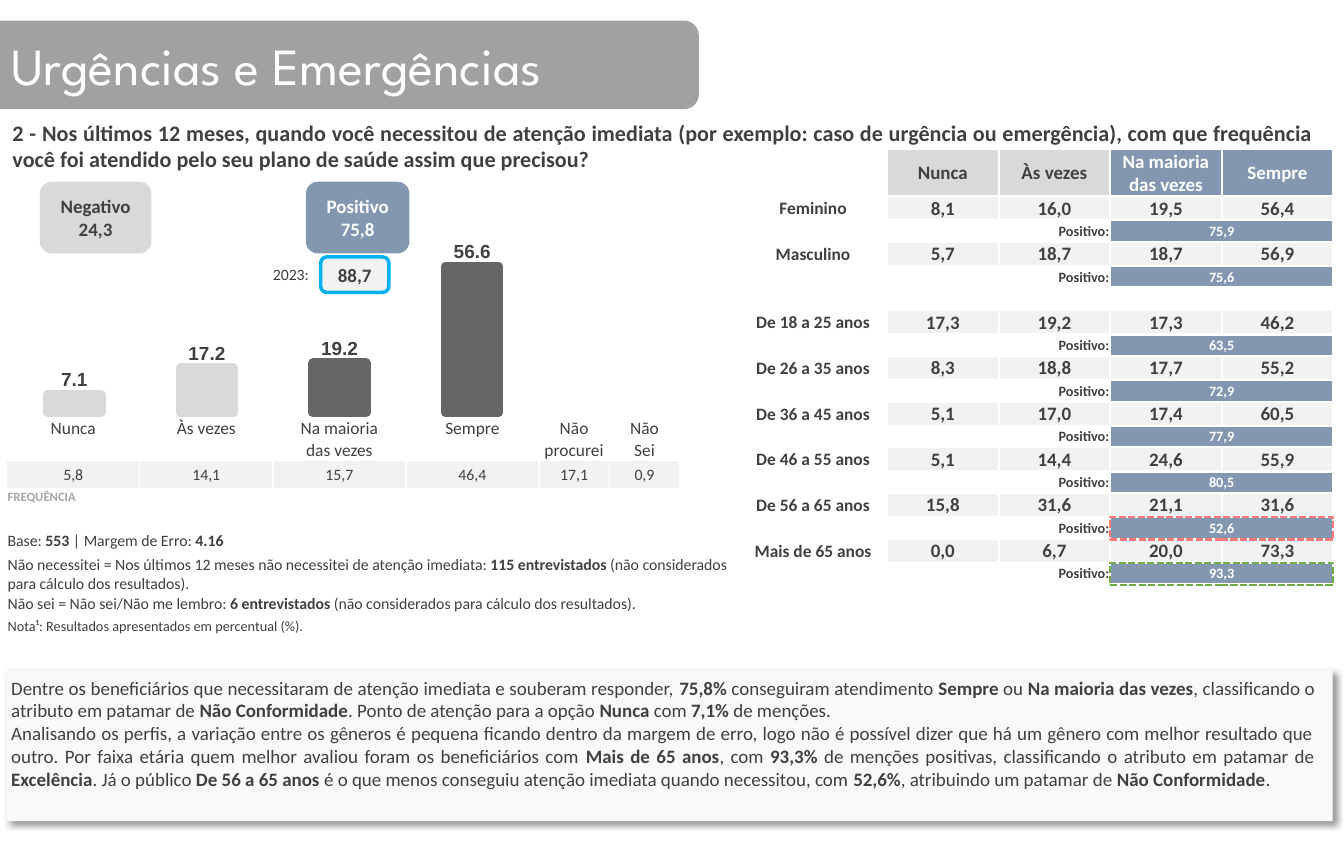
from dataclasses import dataclass

from lxml import etree
from pptx import Presentation
from pptx.chart.data import CategoryChartData
from pptx.dml.color import RGBColor
from pptx.enum.chart import XL_CHART_TYPE, XL_LABEL_POSITION
from pptx.enum.dml import MSO_LINE
from pptx.enum.shapes import MSO_SHAPE
from pptx.enum.text import MSO_ANCHOR, MSO_AUTO_SIZE, PP_ALIGN
from pptx.oxml import parse_xml
from pptx.oxml.ns import nsdecls, qn
from pptx.util import Cm, Pt

LEFT, CENTER, RIGHT, JUSTIFY = PP_ALIGN.LEFT, PP_ALIGN.CENTER, PP_ALIGN.RIGHT, PP_ALIGN.JUSTIFY
TOP, MIDDLE = MSO_ANCHOR.TOP, MSO_ANCHOR.MIDDLE
RECTANGLE, ROUNDED = MSO_SHAPE.RECTANGLE, MSO_SHAPE.ROUNDED_RECTANGLE


@dataclass(frozen=True)
class Theme:
    """Fonts, type sizes and colours of the slide."""
    title_font: str = "League Spartan"
    body_font: str = "Calibri"
    chart_font: str = "Arial"
    title: float = 33
    question: float = 14
    body: float = 12
    label: float = 11
    note: float = 10
    small: float = 9
    tiny: float = 8
    white: str = "FFFFFF"
    ink: str = "404040"
    muted: str = "A6A6A6"
    banner: str = "A1A1A1"
    dark: str = "666666"
    gray: str = "D9D9D9"
    pale: str = "F2F2F2"
    card: str = "F9F9F9"
    blue: str = "8497B0"
    cyan: str = "00B0F0"
    red: str = "FF7979"
    green: str = "70AD47"


@dataclass(frozen=True)
class Box:
    """A rectangle in centimetres."""
    left: float
    top: float
    width: float
    height: float

    def inner(self, left, top, width, height):
        """Return a box placed relative to this one."""
        return Box(self.left + left, self.top + top, width, height)

    def lengths(self):
        """Return the four lengths for python-pptx."""
        return [Cm(value) for value in (self.left, self.top, self.width, self.height)]


THEME = Theme()
PROFILES = [
    ("Feminino", "8,1 16,0 19,5 56,4", "75,9"),
    ("Masculino", "5,7 18,7 18,7 56,9", "75,6"),
    None,
    ("De 18 a 25 anos", "17,3 19,2 17,3 46,2", "63,5"),
    ("De 26 a 35 anos", "8,3 18,8 17,7 55,2", "72,9"),
    ("De 36 a 45 anos", "5,1 17,0 17,4 60,5", "77,9"),
    ("De 46 a 55 anos", "5,1 14,4 24,6 55,9", "80,5"),
    ("De 56 a 65 anos", "15,8 31,6 21,1 31,6", "52,6"),
    ("Mais de 65 anos", "0,0 6,7 20,0 73,3", "93,3"),
]
HIGHLIGHTS = {"52,6": THEME.red, "93,3": THEME.green}


def write(frame, text, size, color=THEME.ink, bold=False, align=LEFT, font=THEME.body_font):
    """Write one paragraph per line, with bold between double asterisks."""
    for index, line in enumerate(text.split("\n")):
        paragraph = frame.add_paragraph() if index else frame.paragraphs[0]
        for part_index, part in enumerate(line.split("**")):
            if part:
                run = paragraph.add_run()
                run.text = part
                if part_index % 2:
                    run.font.bold = True
        paragraph.alignment = align
        paragraph.font.name, paragraph.font.size = font, Pt(size)
        paragraph.font.bold = bold
        paragraph.font.color.rgb = RGBColor.from_string(color)
        if not line:
            etree.SubElement(paragraph._p, qn("a:endParaRPr"), sz=str(int(size * 100)))


def add_block(slide, kind, box, fill=None, line=None, width=1.5):
    """Add a flat preset shape."""
    shape = slide.shapes.add_shape(kind, *box.lengths())
    shape.shadow.inherit = False
    if fill:
        shape.fill.solid()
        shape.fill.fore_color.rgb = RGBColor.from_string(fill)
    else:
        shape.fill.background()
    if line:
        shape.line.color.rgb = RGBColor.from_string(line)
        shape.line.width = Pt(width)
    else:
        shape.line.fill.background()
    return shape


def add_callout(slide, box, text, fill, color=THEME.ink, line=None):
    """Add a rounded box with a centred bold result."""
    shape = add_block(slide, ROUNDED, box, fill, line, 2.25)
    shape.text_frame.vertical_anchor = MIDDLE
    write(shape.text_frame, text, THEME.body, color, True, CENTER)


def add_text(slide, box, text, size, wrap=True, **style):
    """Add a text box."""
    frame = slide.shapes.add_textbox(*box.lengths()).text_frame
    frame.word_wrap = wrap
    write(frame, text, size, **style)
    return frame


def add_grid(slide, box, columns, rows):
    """Add an unstyled table with the given column widths and row heights."""
    table = slide.shapes.add_table(len(rows), len(columns), *box.lengths()).table
    table.first_row = table.horz_banding = False
    for column, width in zip(table.columns, columns):
        column.width = Cm(width)
    for row, height in zip(table.rows, rows):
        row.height = Cm(height)
    return table


def fill_cell(cell, text, size, fill=None, border=1.5, anchor=MIDDLE, **style):
    """Format a cell with thin margins, white borders and its text."""
    cell.margin_left = cell.margin_right = cell.margin_top = Cm(0.02)
    cell.margin_bottom = 0
    cell.vertical_anchor = anchor
    properties = cell._tc.get_or_add_tcPr()
    for side in ("lnL", "lnR", "lnT", "lnB") if border else ():
        properties.append(parse_xml(
            f'<a:{side} {nsdecls("a")} w="{int(Pt(border))}"><a:solidFill>'
            f'<a:srgbClr val="{THEME.white}"/></a:solidFill></a:{side}>'))
    if fill:
        cell.fill.solid()
        cell.fill.fore_color.rgb = RGBColor.from_string(fill)
    else:
        cell.fill.background()
    write(cell.text_frame, text, size, **style)


def build_title(slide, box):
    """Place the title on its banner, which bleeds off the left edge."""
    title = slide.shapes.title
    banner = add_block(slide, ROUNDED, box.inner(-0.6, 0, box.width + 0.6, box.height), THEME.banner)
    title.element.addprevious(banner.element)
    title.left, title.top, title.width, title.height = box.lengths()
    title.text_frame.auto_size = MSO_AUTO_SIZE.NONE
    title.text_frame.vertical_anchor = MIDDLE
    write(title.text_frame, "Urgências e Emergências", THEME.title, THEME.white, font=THEME.title_font)


def build_chart(slide, box):
    """Add the column chart of the four answers."""
    data = CategoryChartData(number_format="0.0")
    data.categories = ["1", "2", "3", "4"]
    data.add_series("Series 1", (56.6, 19.2, 17.2, 7.1))
    chart = slide.shapes.add_chart(XL_CHART_TYPE.COLUMN_CLUSTERED, *box.lengths(), data).chart
    chart.has_legend = chart.has_title = False
    chart.font.name, chart.font.size = THEME.chart_font, Pt(THEME.note)
    chart.category_axis.reverse_order = True
    chart.category_axis.visible = chart.value_axis.visible = False
    chart.value_axis.has_major_gridlines = False
    chart.value_axis.minimum_scale, chart.value_axis.maximum_scale = 0, 60
    plot = chart.plots[0]
    plot.gap_width, plot.overlap, plot.vary_by_categories = 150, -25, False
    plot.has_data_labels = True
    labels = plot.data_labels
    labels.show_value, labels.position = True, XL_LABEL_POSITION.OUTSIDE_END
    labels.number_format, labels.number_format_is_linked = "0.0", False
    labels.font.name, labels.font.size, labels.font.bold = THEME.chart_font, Pt(THEME.body), True
    labels.font.color.rgb = RGBColor.from_string(THEME.ink)
    for index, color in enumerate([THEME.dark] * 2 + [THEME.gray] * 2):
        column = plot.series[0].points[index].format
        column.fill.solid()
        column.fill.fore_color.rgb = column.line.color.rgb = RGBColor.from_string(color)
        column.line.width = Pt(6)
    area = chart.element.find(".//" + qn("c:plotArea"))
    for layout in area.findall(qn("c:layout")):
        area.remove(layout)
    area.insert(0, parse_xml(
        f'<c:layout {nsdecls("c")}><c:manualLayout><c:layoutTarget val="inner"/>'
        '<c:xMode val="edge"/><c:yMode val="edge"/><c:x val="0.03"/><c:y val="0.09"/>'
        '<c:w val="0.94"/><c:h val="0.72"/></c:manualLayout></c:layout>'))


def build_answers(slide, box):
    """Place the chart, its callouts and the frequency table."""
    build_chart(slide, box.inner(-0.2, 1.27, 12.6, 4.8))
    table = add_grid(slide, box.inner(0.15, 5.26, 15.02, 2.23), [2.97] * 4 + [1.57] * 2, [0.96, 0.64, 0.6])
    names = ["Nunca", "Às vezes", "Na maioria\ndas vezes", "Sempre", "Não procurei", "Não\nSei"]
    for index, (name, share) in enumerate(zip(names, "5,8 14,1 15,7 46,4 17,1 0,9".split())):
        fill_cell(table.cell(0, index), name, THEME.label, border=1, anchor=TOP, align=CENTER)
        fill_cell(table.cell(1, index), share, THEME.note, THEME.pale, 1, align=CENTER)
        fill_cell(table.cell(2, index), "" if index else "FREQUÊNCIA", THEME.tiny, border=1,
                  anchor=TOP, color=THEME.muted, bold=True)
    table.cell(2, 0).merge(table.cell(2, 5))
    add_callout(slide, box.inner(0.89, 0, 2.49, 1.6), "Negativo 24,3", THEME.gray)
    add_callout(slide, box.inner(6.83, 0, 2.31, 1.6), "Positivo 75,8", THEME.blue, THEME.white)
    add_callout(slide, box.inner(7.16, 1.68, 1.52, 0.79), "88,7", THEME.pale, line=THEME.cyan)
    add_text(slide, box.inner(5.84, 1.73, 1.35, 0.69), "2023:", THEME.note, wrap=False)


def build_notes(slide, box):
    """Add the table of sample notes."""
    notes = [
        ("Base: **553 **| Margem de Erro: **4.16**", THEME.note, 0.53),
        ("Não necessitei = Nos últimos 12 meses não necessitei de atenção imediata: **115 entrevistados** "
         "(não considerados para cálculo dos resultados).", THEME.note, 0.87),
        ("Não sei = Não sei/Não me lembro: **6 entrevistados** (não considerados para cálculo dos resultados).",
         THEME.note, 0.53),
        ("Nota¹: Resultados apresentados em percentual (%).", THEME.small, 0.53),
    ]
    table = add_grid(slide, box, [box.width], [height for _, _, height in notes])
    for index, (text, size, _) in enumerate(notes):
        fill_cell(table.cell(index, 0), text, size, border=0, anchor=TOP)


def build_profiles(slide, box):
    """Add the results by gender and age, and outline the extreme scores."""
    label_width, value_width = 3.3, 2.49
    heights = [1.05]
    for profile in PROFILES:
        heights += [0.54, 0.48] if profile else [0.51]
    table = add_grid(slide, box, [label_width] + [value_width] * 4, heights)
    headers = ["", "Nunca", "Às vezes", "Na maioria\ndas vezes", "Sempre"]
    fills = [None, THEME.gray, THEME.gray, THEME.blue, THEME.blue]
    for index, (header, fill) in enumerate(zip(headers, fills)):
        color = THEME.white if fill == THEME.blue else THEME.ink
        fill_cell(table.cell(0, index), header, THEME.body, fill, color=color, bold=True, align=CENTER)
    row = 1
    for profile in PROFILES:
        if not profile:
            for index in range(5):
                fill_cell(table.cell(row, index), "", THEME.small)
            row += 1
            continue
        name, shares, positive = profile
        fill_cell(table.cell(row, 0), name, THEME.label, bold=True, align=CENTER)
        for index, share in enumerate(shares.split(), 1):
            fill_cell(table.cell(row, index), share, THEME.body, THEME.pale, bold=True, align=CENTER)
        row += 1
        for index, text in enumerate(["", "Positivo:", "", positive, ""]):
            score = index > 2
            fill_cell(table.cell(row, index), text, THEME.small, THEME.blue if score else None, bold=True,
                      color=THEME.white if score else THEME.ink, align=CENTER if score else RIGHT)
        table.cell(row, 1).merge(table.cell(row, 2))
        table.cell(row, 3).merge(table.cell(row, 4))
        if positive in HIGHLIGHTS:
            outline = box.inner(label_width + 2 * value_width, sum(heights[:row]), 2 * value_width, 0.5)
            add_block(slide, RECTANGLE, outline, line=HIGHLIGHTS[positive]).line.dash_style = MSO_LINE.SQUARE_DOT
        row += 1


def build_analysis(slide, box):
    """Add the shadowed card with the reading of the results."""
    card = add_block(slide, RECTANGLE, box, THEME.card)
    effects = card.element.spPr.find(qn("a:effectLst"))
    effects.append(parse_xml(
        f'<a:outerShdw {nsdecls("a")} blurRad="{int(Pt(4))}" dist="{int(Pt(3))}" dir="2700000" algn="tl">'
        '<a:srgbClr val="000000"><a:alpha val="40000"/></a:srgbClr></a:outerShdw>'))
    add_text(slide, box.inner(-0.15, 0.02, box.width, 2.82), (
        "Dentre os beneficiários que necessitaram de atenção imediata e souberam responder, **75,8%** conseguiram "
        "atendimento **Sempre** ou **Na maioria das vezes**, classificando o atributo em patamar de "
        "**Não Conformidade**. Ponto de atenção para a opção **Nunca** com **7,1%** de menções.\n"
        "Analisando os perfis, a variação entre os gêneros é pequena ficando dentro da margem de erro, logo não é "
        "possível dizer que há um gênero com melhor resultado que outro. Por faixa etária quem melhor avaliou foram "
        "os beneficiários com **Mais de 65 anos**, com **93,3%** de menções positivas, classificando o atributo em "
        "patamar de **Excelência**. Já o público** De 56 a 65 anos **é o que menos conseguiu atenção imediata quando "
        "necessitou, com **52,6%**, atribuindo um patamar de** Não Conformidade**."), THEME.body, align=JUSTIFY)


def main():
    """Build the slide and save it."""
    presentation = Presentation()
    presentation.slide_width, presentation.slide_height = Cm(30), Cm(19.05)
    slide = presentation.slides.add_slide(presentation.slide_layouts[5])
    build_title(slide, Box(0, 0.46, 15.6, 1.98))
    question = add_text(slide, Box(0, 2.51, 29.6, 1.47), (
        "2 - Nos últimos 12 meses, quando você necessitou de atenção imediata (por exemplo: caso de urgência ou "
        "emergência), com que frequência você foi atendido pelo seu plano de saúde assim que precisou?"),
        THEME.question, bold=True, align=JUSTIFY)
    question.margin_left = question.margin_right = Cm(0.28)
    question.margin_top = question.margin_bottom = Cm(0.15)
    build_answers(slide, Box(0, 4.06, 16.7, 7.5))
    build_notes(slide, Box(0.15, 11.86, 16.6, 2.46))
    build_profiles(slide, Box(16.5, 3.33, 13.26, 9.72))
    build_analysis(slide, Box(0.15, 14.96, 29.6, 3.38))
    presentation.save("out.pptx")


if __name__ == "__main__":
    main()
